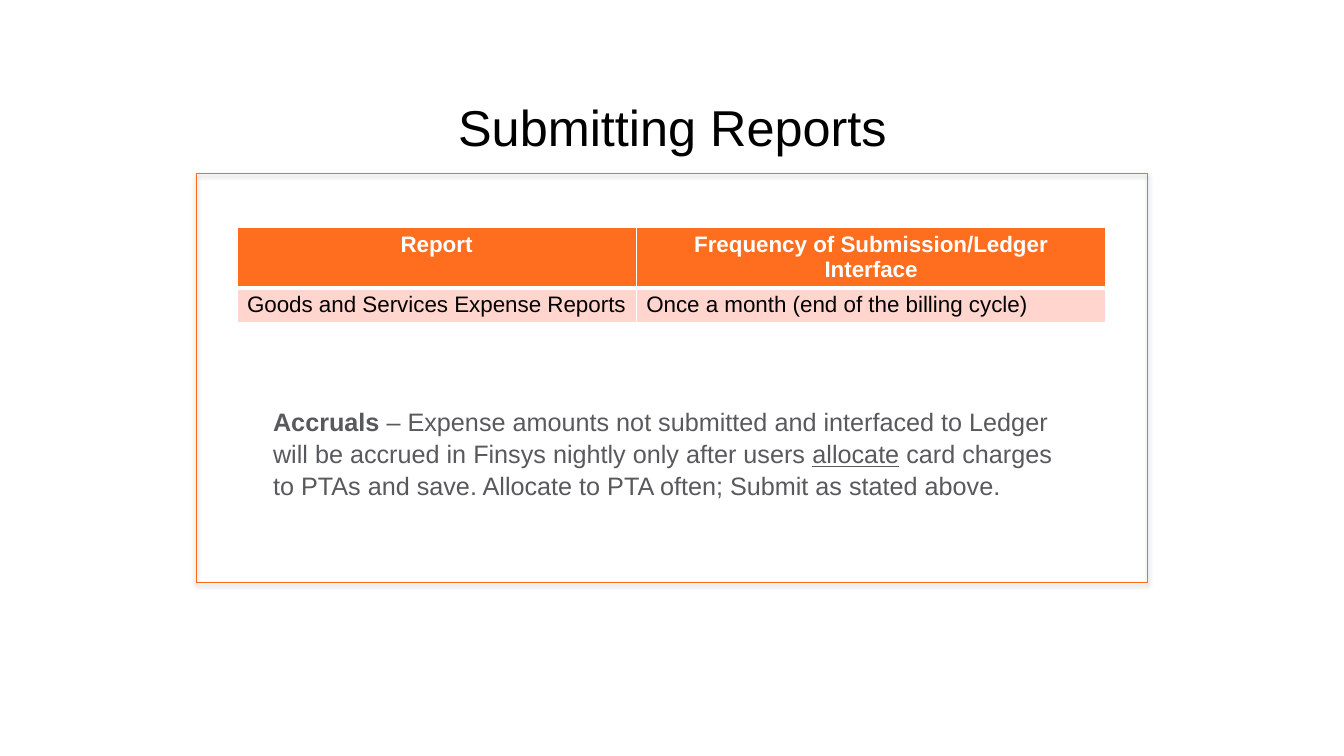
from dataclasses import dataclass

from lxml import etree
from pptx import Presentation
from pptx import util as u
from pptx.dml.color import RGBColor
from pptx.enum import shapes, text
from pptx.oxml import ns

FONT = "Arial"
BLACK, WHITE, GREY = "000000", "FFFFFF", "58595C"
ORANGE, PINK, FRAME_ORANGE = "FF6E1E", "FFD5CD", "FF6A18"


@dataclass
class Span:
    words: str
    bold: bool = False
    underline: bool = False


@dataclass
class Row:
    labels: tuple[str, str]
    fill: str
    color: str
    bold: bool
    align: text.PP_ALIGN
    top_line: float
    bottom_line: float


ROWS = [
    Row(("Report", "Frequency of Submission/Ledger Interface"),
        ORANGE, WHITE, True, text.PP_ALIGN.CENTER, 1, 3),
    Row(("Goods and Services Expense Reports",
         "Once a month (end of the billing cycle)"),
        PINK, BLACK, False, text.PP_ALIGN.LEFT, 3, 1),
]
COLUMN_WIDTHS = (3.96, 4.66)
ROW_HEIGHT = 0.35
ACCRUALS = [
    Span("Accruals", bold=True),
    Span(" – Expense amounts not submitted and interfaced to Ledger will be "
         "accrued in Finsys nightly only after users "),
    Span("allocate", underline=True),
    Span(" card charges to PTAs and save. Allocate to PTA often; "
         "Submit as stated above."),
]


def rgb(code: str) -> RGBColor:
    return RGBColor.from_string(code)


def inches(*lengths: float) -> list[int]:
    return [u.Inches(length) for length in lengths]


def add_span(para, span: Span, size: float, color: str) -> None:
    run = para.add_run()
    run.text = span.words
    style = {"name": FONT, "size": u.Pt(size), "bold": span.bold,
             "underline": span.underline}
    for name, value in style.items():
        setattr(run.font, name, value)
    run.font.color.rgb = rgb(color)


def add_child(parent, tag: str, **attributes: object):
    values = {name: str(value) for name, value in attributes.items()}
    return etree.SubElement(parent, ns.qn(tag), values)


def draw_title(page) -> None:
    title = page.shapes.title
    title.left, title.top, title.width, title.height = inches(2.17, 0.9, 9, 1.25)
    title.text_frame.vertical_anchor = text.MSO_ANCHOR.TOP
    para = title.text_frame.paragraphs[0]
    para.alignment = text.PP_ALIGN.CENTER
    add_span(para, Span("Submitting Reports"), 36, BLACK)


def draw_cell(cell, label: str, row: Row) -> None:
    properties = cell._tc.get_or_add_tcPr()
    borders = {"a:lnL": 1, "a:lnR": 1, "a:lnT": row.top_line,
               "a:lnB": row.bottom_line}
    for tag, points in borders.items():
        line = add_child(properties, tag, w=u.Pt(points))
        add_child(add_child(line, "a:solidFill"), "a:srgbClr", val=WHITE)
    cell.fill.solid()
    cell.fill.fore_color.rgb = rgb(row.fill)
    para = cell.text_frame.paragraphs[0]
    para.alignment = row.align
    add_span(para, Span(label, row.bold), 16, row.color)


def draw_table(page) -> None:
    box = inches(2.35, 2.26, sum(COLUMN_WIDTHS), ROW_HEIGHT * len(ROWS))
    table = page.shapes.add_table(len(ROWS), len(COLUMN_WIDTHS), *box).table
    for column, width in zip(table.columns, COLUMN_WIDTHS):
        column.width = u.Inches(width)
    for r, row in enumerate(ROWS):
        table.rows[r].height = u.Inches(ROW_HEIGHT)
        for c, label in enumerate(row.labels):
            draw_cell(table.cell(r, c), label, row)


def draw_accruals(page) -> None:
    frame = page.shapes.add_textbox(*inches(2.61, 3.97, 8.12, 1.01)).text_frame
    frame.word_wrap = True
    para = frame.paragraphs[0]
    para.line_spacing = 1.05
    for span in ACCRUALS:
        add_span(para, span, 18, GREY)


def draw_frame(page) -> None:
    box = page.shapes.add_shape(shapes.MSO_SHAPE.RECTANGLE,
                                *inches(1.95, 1.72, 9.43, 4.06))
    box.fill.background()
    box.line.color.rgb = rgb(FRAME_ORANGE)
    box.line.width = u.Pt(0.75)
    # Soft shadow straight below the outline
    box.shadow.inherit = False
    effects = box._element.spPr.find(ns.qn("a:effectLst"))
    shadow = add_child(effects, "a:outerShdw", blurRad=u.Pt(3.1),
                       dist=u.Pt(1.8), dir=90 * 60000, rotWithShape=0)
    color = add_child(shadow, "a:srgbClr", val=BLACK)
    add_child(color, "a:alpha", val=35000)


def main() -> None:
    deck = Presentation()
    deck.slide_width, deck.slide_height = inches(13.33, 7.5)
    page = deck.slides.add_slide(deck.slide_layouts[5])
    draw_title(page)
    draw_table(page)
    draw_accruals(page)
    draw_frame(page)
    deck.save("out.pptx")


if __name__ == "__main__":
    main()
